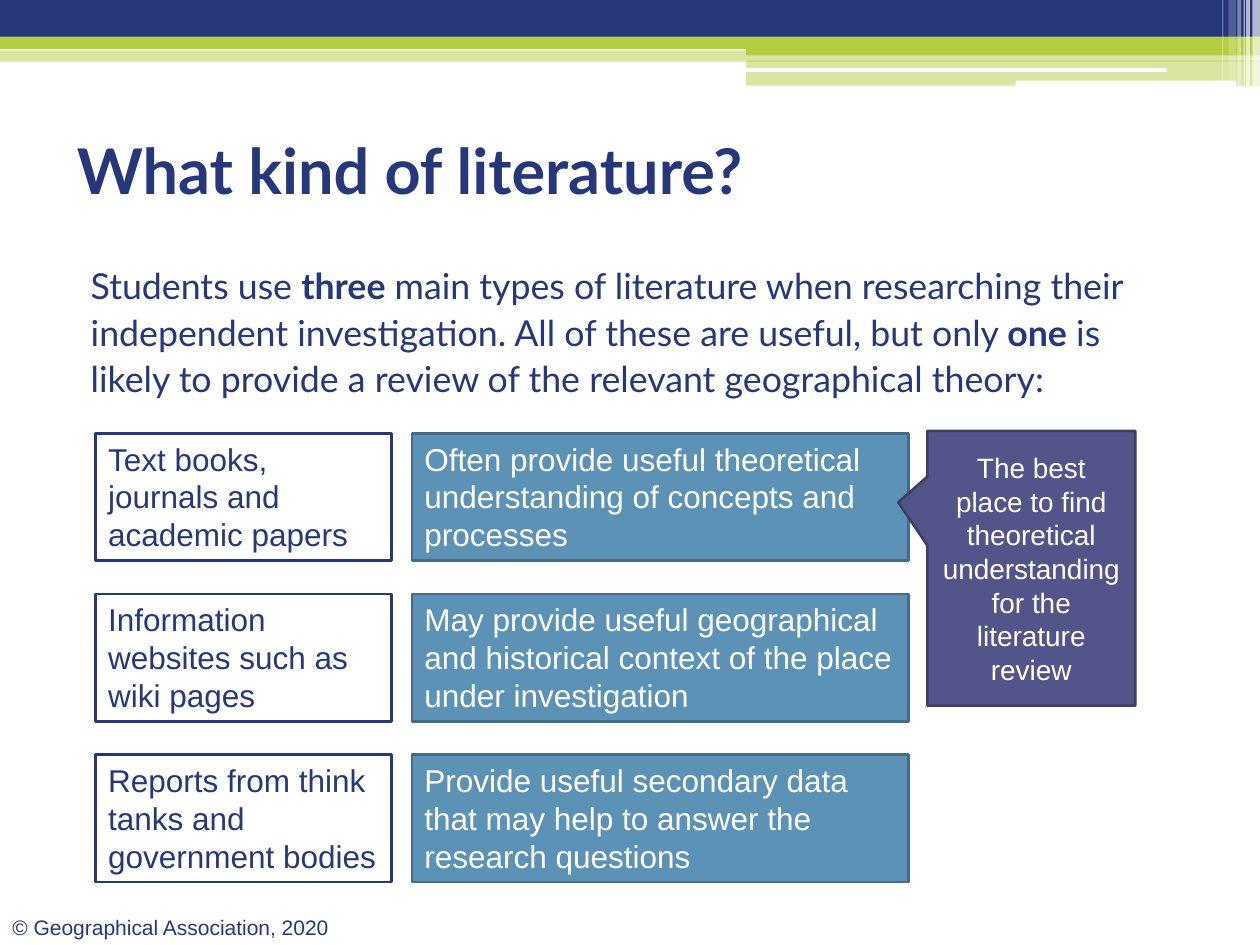
"""Build a slide that compares three types of literature."""
from lxml.etree import SubElement
from pptx import Presentation
from pptx.dml.color import RGBColor
from pptx.enum.shapes import MSO_SHAPE as Shape
from pptx.enum.text import MSO_ANCHOR as Anchor, PP_ALIGN as Align
from pptx.oxml.ns import qn
from pptx.util import Inches, Pt

WIDTH, HEIGHT = Inches(10), Inches(7.5)
COLUMNS, ROWS = 1000, 750
NAVY = RGBColor(0x26, 0x37, 0x7C)
LIME = RGBColor(0xB4, 0xCE, 0x44)
WHITE = RGBColor(0xFF, 0xFF, 0xFF)
BLUE = RGBColor(0x5C, 0x92, 0xB5)
DARK_BLUE = RGBColor(0x44, 0x6C, 0x86)
PURPLE = RGBColor(0x53, 0x54, 0x8A)
DARK_PURPLE = RGBColor(0x3D, 0x3E, 0x66)

BANDS = [
    ((0, 40, 1000, 9), LIME, 50),
    ((0, 0, 1000, 34), NAVY, 100),
    ((0, 29, 1000, 10), LIME, 100),
    ((592, 34, 408, 10), LIME, 100),
    ((592, 48, 408, 20), LIME, 50),
]
SLITS = [(591, 54, 335, 3), (806, 64, 175, 4)]
STRIPES = [
    (994, 6, 68, 65), (989, 3, 68, 65), (987, 1, 68, 60),
    (982, 3, 68, 40), (975, 6, 64, 20), (970, 1, 64, 30),
]
LITERATURE = [
    ("Text books, journals and academic papers",
     "Often provide useful theoretical understanding of concepts and processes"),
    ("Information websites such as wiki pages",
     "May provide useful geographical and historical context of the place under investigation"),
    ("Reports from think tanks and government bodies",
     "Provide useful secondary data that may help to answer the research questions"),
]
INTRODUCTION = [
    ("Students use ", False),
    ("three", True),
    (" main types of literature when researching their independent investigation. "
     "All of these are useful, but only ", False),
    ("one", True),
    (" is likely to provide a review of the relevant geographical theory:", False),
]
FIRST_ROW, ROW_PITCH, ROW_HEIGHT = 344, 127.5, 101


def place(column, row, columns, rows):
    """Turn grid cells into left, top, width and height."""
    cell_width, cell_height = WIDTH / COLUMNS, HEIGHT / ROWS
    return (int(column * cell_width), int(row * cell_height),
            int(columns * cell_width), int(rows * cell_height))


def set_font(paragraph, name, size, color):
    """Set the font that all runs of a paragraph share."""
    font = paragraph.font
    font.name, font.size = name, Pt(size)
    font.color.rgb = color


def add_block(slide, cells, fill, opacity=100, line=None, kind=Shape.RECTANGLE):
    """Add a filled shape, outlined if a line colour is given."""
    shape = slide.shapes.add_shape(kind, *place(*cells))
    shape.shadow.inherit = False
    shape.fill.solid()
    shape.fill.fore_color.rgb = fill
    if opacity < 100:
        color = shape.fill._xPr.find(f".//{qn('a:srgbClr')}")
        SubElement(color, qn("a:alpha"), val=str(opacity * 1000))
    if line is None:
        shape.line.fill.background()
    else:
        shape.line.color.rgb = line
        shape.line.width = Pt(1.5)
    return shape


def write(shape, text, size, color, align=Align.LEFT, anchor=Anchor.TOP):
    """Write one wrapped paragraph in a shape."""
    frame = shape.text_frame
    frame.word_wrap = True
    frame.vertical_anchor = anchor
    paragraph = frame.paragraphs[0]
    paragraph.text = text
    paragraph.alignment = align
    set_font(paragraph, "Arial", size, color)


def add_banner(slide):
    """Add the coloured bands, slits and stripes at the top."""
    for cells, color, opacity in BANDS:
        add_block(slide, cells, color, opacity)
    for cells in SLITS:
        add_block(slide, cells, WHITE, kind=Shape.ROUNDED_RECTANGLE)
    for column, columns, rows, opacity in STRIPES:
        add_block(slide, (column, 0, columns, rows), WHITE, opacity)


def format_title(slide, text):
    """Move and format the title placeholder."""
    title = slide.shapes.title
    title.left, title.top, title.width, title.height = place(51, 76, 900, 117)
    title.text_frame.vertical_anchor = Anchor.MIDDLE
    paragraph = title.text_frame.paragraphs[0]
    paragraph.text = text
    paragraph.alignment = Align.LEFT
    set_font(paragraph, "Lato", 36, NAVY)
    paragraph.font.bold = True


def add_introduction(slide):
    """Add the introduction with its bold words."""
    box = slide.shapes.add_textbox(*place(50, 202, 899, 142))
    frame = box.text_frame
    frame.word_wrap = True
    frame.margin_left = Inches(0.22)
    paragraph = frame.paragraphs[0]
    paragraph.line_spacing = 1.08
    set_font(paragraph, "Lato", 20.4, NAVY)
    for text, bold in INTRODUCTION:
        run = paragraph.add_run()
        run.text = text
        run.font.bold = bold


def add_literature(slide):
    """Add a row with source and use for each type of literature."""
    for index, (source, use) in enumerate(LITERATURE):
        row = FIRST_ROW + index * ROW_PITCH
        source_box = add_block(slide, (76, row, 235, ROW_HEIGHT), WHITE, line=NAVY)
        write(source_box, source, 18, NAVY)
        use_box = add_block(slide, (327, row, 394, ROW_HEIGHT), BLUE, line=DARK_BLUE)
        write(use_box, use, 18, WHITE)


def add_callout(slide, text):
    """Add the callout that points at the first row."""
    callout = add_block(slide, (736, 342, 165, 218), PURPLE, line=DARK_PURPLE,
                        kind=Shape.RECTANGULAR_CALLOUT)
    callout.adjustments[0] = -0.64
    callout.adjustments[1] = -0.24
    write(callout, text, 16, WHITE, Align.CENTER, Anchor.MIDDLE)


def main():
    """Build and save the slide."""
    presentation = Presentation()
    presentation.slide_width, presentation.slide_height = WIDTH, HEIGHT
    slide = presentation.slides.add_slide(presentation.slide_layouts[5])
    add_banner(slide)
    footer = slide.shapes.add_textbox(*place(0, 721, 287, 30))
    write(footer, "© Geographical Association, 2020", 12, NAVY)
    format_title(slide, "What kind of literature?")
    add_introduction(slide)
    add_literature(slide)
    add_callout(slide, "The best place to find theoretical understanding "
                       "for the literature review")
    presentation.save("out.pptx")


if __name__ == "__main__":
    main()
